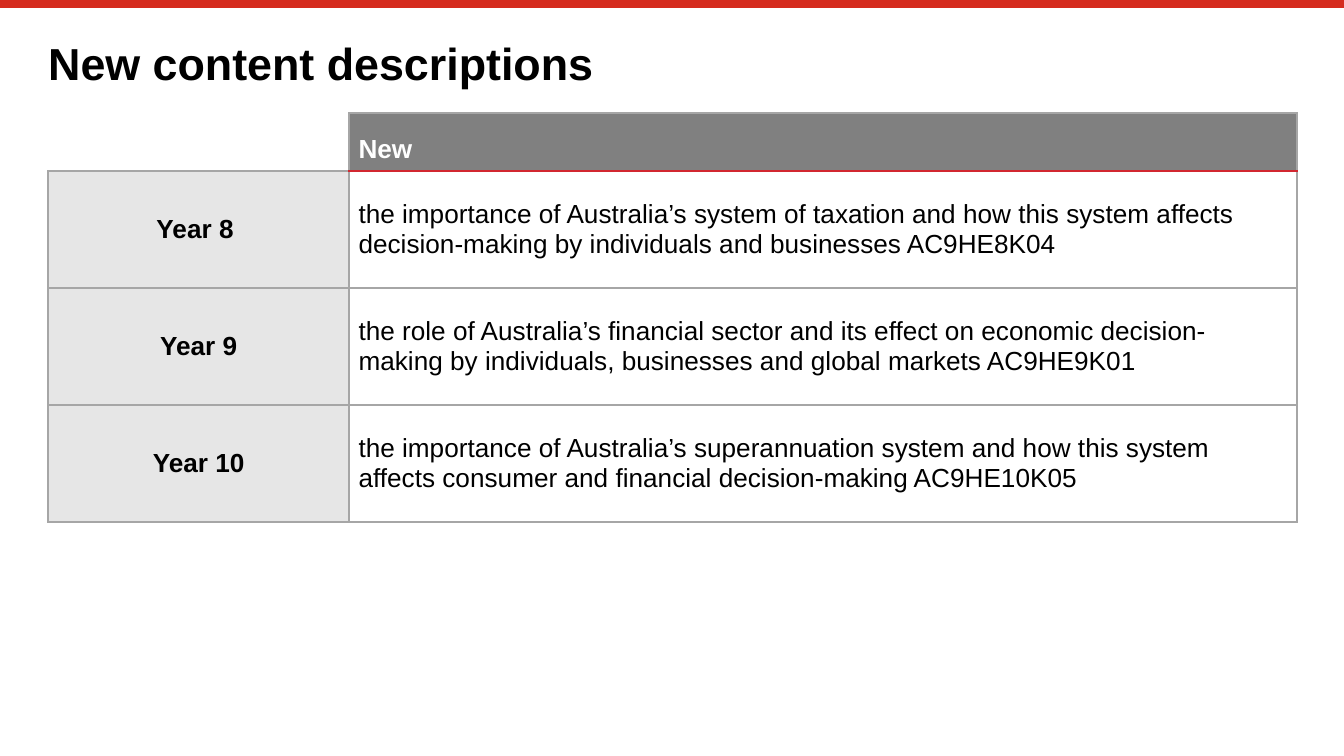
"""Build the slide of new content descriptions by year level."""
from lxml import etree
from pptx import Presentation
from pptx.dml.color import RGBColor
from pptx.enum import shapes, text
from pptx.oxml.ns import qn
from pptx.util import Pt

TITLE = "New content descriptions"
HEADER = "New"
YEARS = [
    ("Year 8 ", "the importance of Australia’s system of taxation and how this system affects "
                "decision-making by individuals and businesses AC9HE8K04"),
    ("Year 9", "the role of Australia’s financial sector and its effect on economic "
               "decision-making by individuals, businesses and global markets AC9HE9K01"),
    ("Year 10", "the importance of Australia’s superannuation system and how this system affects "
                "consumer and financial decision-making AC9HE10K05"),
]
THEME = {
    "font": "Arial", "title": 24, "body": 14,
    "black": "000000", "white": "FFFFFF", "head": "808080", "year": "E6E6E6",
    "grid": "A6A6A6", "accent": "D22730", "bar": "D52B1E",
}
WIDTH, HEIGHT = 720, 405
LEFT, TABLE_TOP = 25.8, 60.5
COLUMNS = [161.3, 507.6]
ROWS = [28.8] + [62.7] * len(YEARS)
BAR_WEIGHT = 4.2
GRID, ACCENT = ("grid", 1), ("accent", 1.5)


def apply(target, values):
    """Set each named attribute on the target."""
    for name, value in values.items():
        setattr(target, name, value)


def color(name):
    """Return a theme colour."""
    return RGBColor.from_string(THEME[name])


def write(frame, words, size, ink="black", bold=True, **layout):
    """Write one paragraph into a text frame."""
    para = frame.paragraphs[0]
    apply(para, layout)
    span = para.add_run()
    span.text = words
    apply(span.font, {"name": THEME["font"], "size": Pt(THEME[size]), "bold": bold})
    span.font.color.rgb = color(ink)


def draw_borders(cell, edges):
    """Draw left, right, top and bottom cell borders; None hides one."""
    properties = cell._tc.get_or_add_tcPr()
    for index, (side, edge) in enumerate(zip("LRTB", edges)):
        line = etree.Element(qn(f"a:ln{side}"))
        properties.insert(index, line)
        if edge is None:
            etree.SubElement(line, qn("a:noFill"))
            continue
        name, weight = edge
        line.set("w", str(Pt(weight)))
        fill = etree.SubElement(line, qn("a:solidFill"))
        etree.SubElement(fill, qn("a:srgbClr"), val=THEME[name])


def style_cell(cell, fill, edges):
    """Set the margins, anchor, fill and borders of a cell."""
    apply(cell, {"margin_left": Pt(5), "margin_right": Pt(5), "margin_top": Pt(2.9),
                 "margin_bottom": Pt(2.9), "vertical_anchor": text.MSO_ANCHOR.MIDDLE})
    if fill:
        cell.fill.solid()
        cell.fill.fore_color.rgb = color(fill)
    else:
        cell.fill.background()
    draw_borders(cell, edges)


def add_bar(page):
    """Add the coloured bar along the top edge."""
    middle = Pt(BAR_WEIGHT / 2)
    bar = page.shapes.add_connector(shapes.MSO_CONNECTOR.STRAIGHT, 0, middle, Pt(WIDTH), middle)
    bar.line.width = Pt(BAR_WEIGHT)
    bar.line.color.rgb = color("bar")
    etree.SubElement(bar._element.spPr, qn("a:effectLst"))


def add_title(page):
    """Add the slide title."""
    box = page.shapes.add_textbox(Pt(LEFT), Pt(21.6), Pt(sum(COLUMNS)), Pt(28))
    frame = box.text_frame
    apply(frame, {"word_wrap": True, "vertical_anchor": text.MSO_ANCHOR.MIDDLE,
                  "margin_left": 0, "margin_right": 0, "margin_top": 0, "margin_bottom": 0})
    write(frame, TITLE, "title", line_spacing=0.9)


def add_year_table(page):
    """Add the table of years and descriptions."""
    table = page.shapes.add_table(len(ROWS), len(COLUMNS), Pt(LEFT), Pt(TABLE_TOP),
                                  Pt(sum(COLUMNS)), Pt(sum(ROWS))).table
    apply(table, {"first_row": False, "horz_banding": False})
    for column, width in zip(table.columns, COLUMNS):
        column.width = Pt(width)
    for row, height in zip(table.rows, ROWS):
        row.height = Pt(height)

    style_cell(table.cell(0, 0), None, (None, GRID, None, GRID))
    head = table.cell(0, 1)
    style_cell(head, "head", (GRID, GRID, GRID, ACCENT))
    write(head.text_frame, HEADER, "body", "white", line_spacing=1.5)

    for index, (year, description) in enumerate(YEARS, 1):
        label, detail = table.cell(index, 0), table.cell(index, 1)
        style_cell(label, "year", (GRID,) * 4)
        write(label.text_frame, year, "body", alignment=text.PP_ALIGN.CENTER)
        style_cell(detail, None, (GRID, GRID, ACCENT if index == 1 else GRID, GRID))
        write(detail.text_frame, description, "body", bold=False)


def main():
    """Build and save the deck."""
    deck = Presentation()
    apply(deck, {"slide_width": Pt(WIDTH), "slide_height": Pt(HEIGHT)})
    page = deck.slides.add_slide(deck.slide_layouts[6])
    add_bar(page)
    add_title(page)
    add_year_table(page)
    deck.save("out.pptx")


if __name__ == "__main__":
    main()
